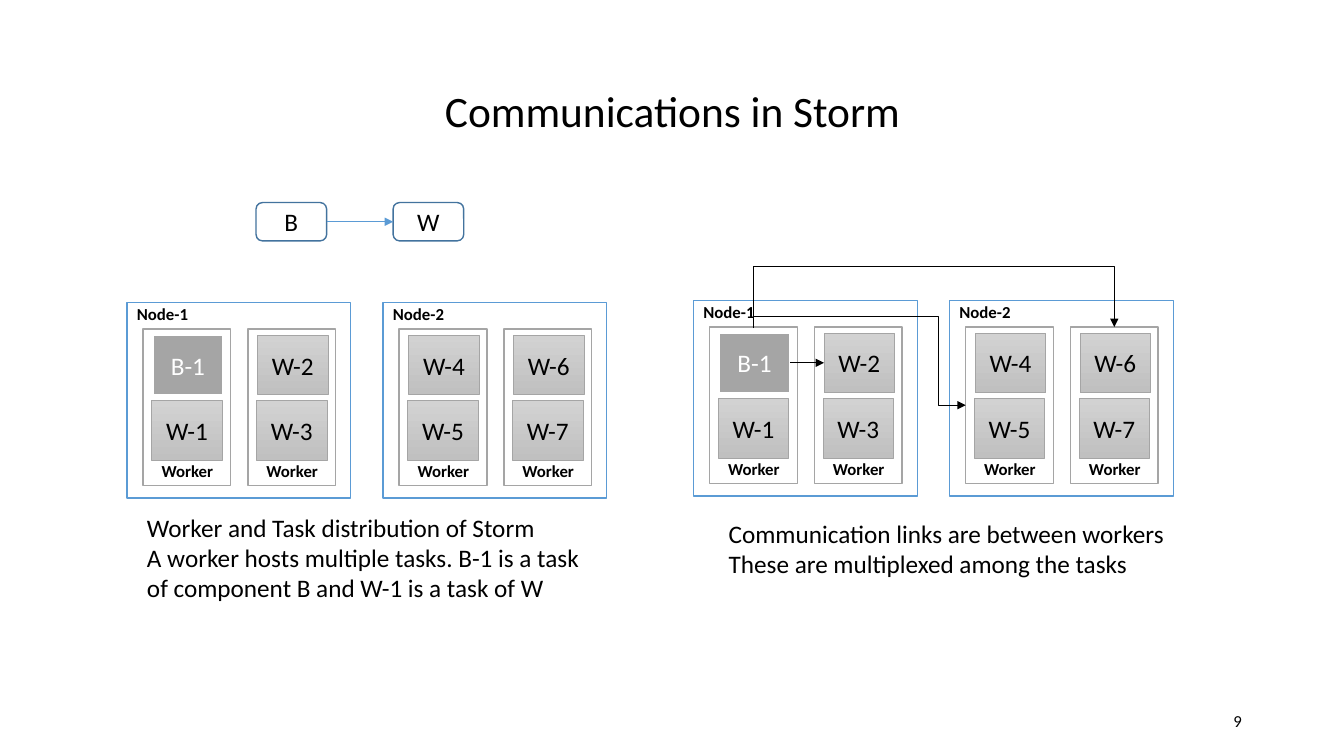
import dataclasses

import lxml.etree
import pptx
import pptx.dml.color
import pptx.enum.shapes
import pptx.enum.text
import pptx.oxml
import pptx.oxml.ns
import pptx.util

COLORS = {
    "ink": "000000", "paper": "FFFFFF", "blue": "5B9BD5", "navy": "43739E",
    "gray": "A5A5A5", "light": "D2D2D2", "dark": "C0C0C0",
}
FONT = "Calibri"
SHAPE = pptx.enum.shapes.MSO_SHAPE
CONNECTOR = pptx.enum.shapes.MSO_CONNECTOR
ALIGN = pptx.enum.text.PP_ALIGN
ANCHOR = pptx.enum.text.MSO_ANCHOR
NODES = [
    ("Node-1", [("B-1", "W-1"), ("W-2", "W-3")]),
    ("Node-2", [("W-4", "W-5"), ("W-6", "W-7")]),
]


@dataclasses.dataclass
class Box:
    left: float
    top: float
    width: float
    height: float

    def share(self, left, top, width, height):
        return Box(self.left + self.width * left / 100,
                   self.top + self.height * top / 100,
                   self.width * width / 100, self.height * height / 100)

    def point(self, across, down):
        return (self.left + self.width * across / 100,
                self.top + self.height * down / 100)

    def emu(self):
        return [pptx.util.Emu(round(length)) for length in
                (self.left, self.top, self.width, self.height)]


def color(name):
    return pptx.dml.color.RGBColor.from_string(COLORS[name])


def write(frame, lines, size, ink="ink", align=ALIGN.LEFT, bold=False):
    for index, line in enumerate(lines):
        para = frame.add_paragraph() if index else frame.paragraphs[0]
        para.alignment = align
        span = para.add_run()
        span.text = line
        span.font.name = FONT
        span.font.size = pptx.util.Pt(size)
        span.font.bold = bold
        span.font.color.rgb = color(ink)


def add_text(page, box, lines, size, wrap=True, anchor=ANCHOR.TOP, **style):
    frame = page.shapes.add_textbox(*box.emu()).text_frame
    frame.word_wrap = wrap
    frame.vertical_anchor = anchor
    write(frame, lines, size, **style)


def add_block(page, box, line, weight, fill=None, text=None, ink="ink", kind=SHAPE.RECTANGLE):
    shape = page.shapes.add_shape(kind, *box.emu())
    shape.shadow.inherit = False
    if fill == "gradient":
        shape.fill.gradient()
        shape.fill.gradient_angle = 270
        for stop, shade in zip(shape.fill.gradient_stops, ("light", "dark")):
            stop.color.rgb = color(shade)
    elif fill:
        shape.fill.solid()
        shape.fill.fore_color.rgb = color(fill)
    else:
        shape.fill.background()
    shape.line.color.rgb = color(line)
    shape.line.width = pptx.util.Pt(weight)
    if text:
        shape.text_frame.vertical_anchor = ANCHOR.MIDDLE
        write(shape.text_frame, [text], 18, ink, ALIGN.CENTER)
    return shape


def style_arrow(arrow, ink):
    arrow.line.color.rgb = color(ink)
    arrow.line.width = pptx.util.Pt(0.5)
    outline = arrow._element.spPr.find(pptx.oxml.ns.qn("a:ln"))
    tail = lxml.etree.SubElement(outline, pptx.oxml.ns.qn("a:tailEnd"))
    tail.set("type", "triangle")
    lxml.etree.SubElement(arrow._element.spPr, pptx.oxml.ns.qn("a:effectLst"))


def add_arrow(page, source, target, ink):
    arrow = page.shapes.add_connector(CONNECTOR.STRAIGHT, 0, 0, 0, 0)
    arrow.begin_connect(source, 3)
    arrow.end_connect(target, 1)
    style_arrow(arrow, ink)


def add_elbow(page, start, end, rotation, flips, bends):
    across = end[0] - start[0]
    down = max(end[1] - start[1], pptx.util.Inches(0.01))
    center = Box(start[0], start[1], across, down).point(50, 50)
    left, top, width, height = Box(
        center[0] - down / 2, center[1] - across / 2, down, across).emu()
    arrow = page.shapes.add_connector(CONNECTOR.ELBOW, left, top, left + width, top + height)
    frame = arrow._element.spPr.find(pptx.oxml.ns.qn("a:xfrm"))
    frame.set("rot", str(rotation * 60000))
    for flip in flips:
        frame.set(flip, "1")
    geometry = arrow._element.spPr.find(pptx.oxml.ns.qn("a:prstGeom"))
    geometry.set("prst", f"bentConnector{len(bends) + 2}")
    guides = geometry.find(pptx.oxml.ns.qn("a:avLst"))
    if guides is None:
        guides = lxml.etree.SubElement(geometry, pptx.oxml.ns.qn("a:avLst"))
    for number, bend in enumerate(bends, 1):
        guide = lxml.etree.SubElement(guides, pptx.oxml.ns.qn("a:gd"))
        guide.set("name", f"adj{number}")
        guide.set("fmla", f"val {round(bend * 100000)}")
    style_arrow(arrow, "ink")


def draw_worker(page, box, names):
    add_block(page, box, "gray", 1, "paper")
    places = (box.share(10.92, 3.87, 80.46, 38.06), box.share(9.77, 45.81, 80.46, 38.06))
    tasks = {}
    for name, place in zip(names, places):
        if name.startswith("B"):
            tasks[name] = add_block(page, place, "paper", 1.5, "gray", name, "paper")
        else:
            tasks[name] = add_block(page, place, "gray", 0.5, "gradient", name)
    add_text(page, box.share(9.77, 81.29, 82.76, 19.35), ["Worker"], 12, wrap=False, bold=True)
    return tasks


def draw_cluster(page, box):
    workers, tasks = [], {}
    for column, (label, groups) in enumerate(NODES):
        node = box.share(53.36 * column, 0, 46.64, 100)
        add_block(page, node, "blue", 1, "paper")
        add_text(page, node.share(0, -2.06, 32.43, 15.46), [label], 12, wrap=False, bold=True)
        for slot, names in enumerate(groups):
            worker = node.share(7.21 + 46.84 * slot, 13.66, 39.19, 79.9)
            workers.append(worker)
            tasks.update(draw_worker(page, worker, names))
    return workers, tasks


def draw_links(page, workers, tasks):
    add_arrow(page, tasks["B-1"], tasks["W-2"], "ink")
    start = workers[0].point(50, 0)
    add_elbow(page, start, workers[2].point(0, 50), 270, ["flipH"], [-0.14, 0.87])
    add_elbow(page, start, workers[3].point(50, 0), 90, ["flipH", "flipV"], [62])


def draw_topology(page, box):
    source, target = [
        add_block(page, box.share(left, 0, 34, 100), "navy", 1, text=name,
                  kind=SHAPE.ROUNDED_RECTANGLE)
        for name, left in (("B", 0), ("W", 66))]
    add_arrow(page, source, target, "blue")


def draw_title(page, box):
    title = page.shapes.title
    title.left, title.top, title.width, title.height = box.emu()
    title.text_frame.vertical_anchor = ANCHOR.MIDDLE
    write(title.text_frame, ["Communications in Storm"], 31, align=ALIGN.CENTER)
    title.text_frame.paragraphs[0].line_spacing = 0.9


def main():
    deck = pptx.Presentation()
    deck.slide_width = pptx.util.Inches(13.33)
    deck.slide_height = pptx.util.Inches(7.5)
    page = deck.slides.add_slide(deck.slide_layouts[5])
    full = Box(0, 0, deck.slide_width, deck.slide_height)
    draw_title(page, full.share(6.9, 5.33, 86.25, 19.33))
    add_text(page, full.share(70.65, 92.67, 22.5, 5.33), ["9"], 12,
             anchor=ANCHOR.MIDDLE, align=ALIGN.RIGHT)
    draw_topology(page, full.share(19.05, 26.8, 15.45, 5.07))
    draw_cluster(page, full.share(9.45, 40, 35.7, 25.87))
    draw_links(page, *draw_cluster(page, full.share(51.6, 39.73, 35.7, 25.87)))
    add_text(page, full.share(10.2, 67.07, 34.88, 13.47), [
        "Worker and Task distribution of Storm",
        "A worker hosts multiple tasks. B-1 is a task of component B and W-1 is a task of W"], 18)
    add_text(page, full.share(53.48, 67.87, 34.28, 13.47), [
        "Communication links are between workers",
        "These are multiplexed among the tasks"], 18, wrap=False)
    deck.save("out.pptx")


if __name__ == "__main__":
    main()
